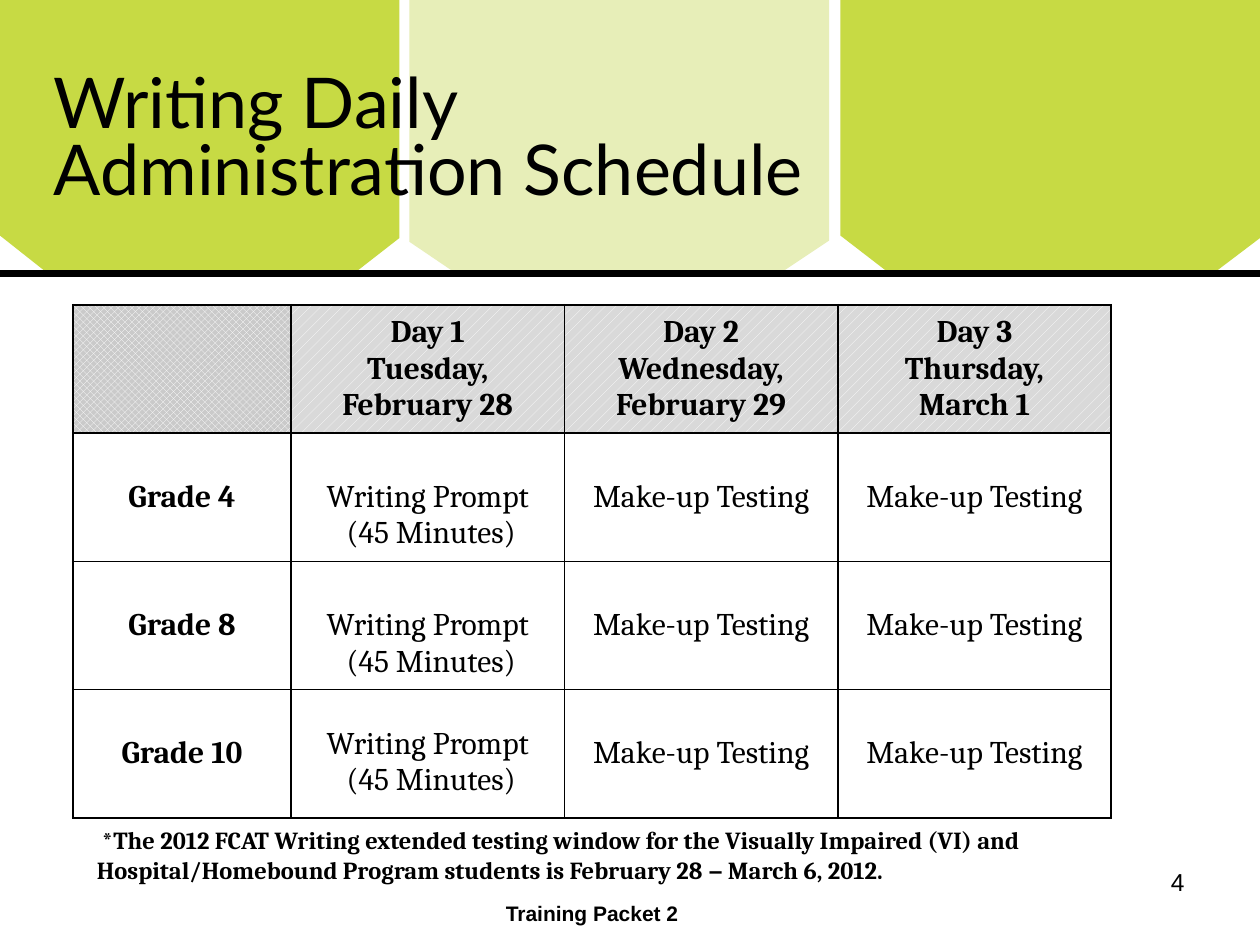
from lxml.etree import SubElement
from pptx import Presentation
from pptx.dml.color import RGBColor
from pptx.enum.dml import MSO_PATTERN as Pattern
from pptx.enum.shapes import MSO_CONNECTOR as Connector
from pptx.enum.text import MSO_ANCHOR as Anchor, MSO_AUTO_SIZE as AutoSize, PP_ALIGN as Align
from pptx.oxml.ns import qn
from pptx.util import Inches, Pt

BLACK, WHITE, LIME, PALE = "000000", "FFFFFF", "C7DA44", "E7EEB8"
HEADINGS = [
    [],
    ["Day 1", "Tuesday,", "February 28"],
    ["Day 2", "Wednesday,", "February 29"],
    ["Day 3", "Thursday,", "March 1"],
]
GRADES = ["Grade 4", "Grade 8", "Grade 10"]
PROMPT = ["Writing Prompt", " (45 Minutes)"]
MAKE_UP = ["Make-up Testing"]


def color(value):
    """Turn a hex string into a colour."""
    return RGBColor.from_string(value)


def write(frame, lines, align=Align.LEFT, spacing=None, **style):
    """Fill a frame with lines; a line is a string or a list of (text, style) runs."""
    for index, line in enumerate(lines):
        paragraph = frame.paragraphs[0] if index == 0 else frame.add_paragraph()
        paragraph.alignment = align
        paragraph.line_spacing = spacing
        for text, changes in [(line, {})] if isinstance(line, str) else line:
            look = {"font": "Cambria", "size": 18, "bold": False, **style, **changes}
            for part, piece in enumerate(text.split("\n")):
                if part:
                    paragraph.add_line_break()
                run = paragraph.add_run()
                run.text = piece
                run.font.name = look["font"]
                run.font.size = Pt(look["size"])
                run.font.bold = look["bold"]
                run.font.color.rgb = color(BLACK)


def add_text(slide, box, lines, anchor=Anchor.TOP, wrap=True, grow=False, **style):
    """Place a text box and write its lines."""
    frame = slide.shapes.add_textbox(*map(Inches, box)).text_frame
    frame.word_wrap = wrap
    frame.auto_size = AutoSize.SHAPE_TO_FIT_TEXT if grow else AutoSize.NONE
    frame.vertical_anchor = anchor
    write(frame, lines, **style)


def add_tab(slide, box, fill, left_cut, right_cut):
    """Draw a tab whose bottom corners are cut by (width, height)."""
    left, top, width, height = box
    right, bottom = left + width, top + height
    points = [
        (left, top),
        (right, top),
        (right, bottom - right_cut[1]),
        (right - right_cut[0], bottom),
        (left + left_cut[0], bottom),
        (left, bottom - left_cut[1]),
    ]
    corners = [(Inches(x), Inches(y)) for x, y in points]
    outline = slide.shapes.build_freeform(*corners[0], scale=1.0)
    outline.add_line_segments(corners[1:], close=True)
    tab = outline.convert_to_shape()
    tab.shadow.inherit = False
    tab.fill.solid()
    tab.fill.fore_color.rgb = color(fill)
    tab.line.fill.background()


def add_banner(slide, box):
    """Draw the three tabs, the rule under them and the title."""
    left, top, width, height = box
    add_tab(slide, (left, top, 3.17, height), LIME, (0.38, 0.3), (0.36, 0.28))
    add_tab(slide, (left + 3.25, top, 3.33, height), PALE, (0.37, 0.25), (0.39, 0.26))
    add_tab(slide, (left + 6.67, top, 3.33, height), LIME, (0.39, 0.3), (0.37, 0.28))
    bottom = Inches(top + height)
    rule = slide.shapes.add_connector(
        Connector.STRAIGHT, Inches(left), bottom, Inches(left + width), bottom)
    rule.line.color.rgb = color(BLACK)
    rule.line.width = Pt(4)
    SubElement(rule._element.spPr, qn("a:effectLst"))
    add_text(slide, (left + 0.33, top + 0.5, 9, 1.25),
             ["Writing Daily \nAdministration Schedule"],
             anchor=Anchor.MIDDLE, spacing=0.8, font="Lato", size=40)


def set_borders(cell, widths):
    """Draw the left, right, top and bottom borders of a cell."""
    properties = cell._tc.get_or_add_tcPr()
    for side, width in zip("LRTB", widths):
        border = SubElement(properties, qn(f"a:ln{side}"), w=str(Pt(width)))
        fill = SubElement(border, qn("a:solidFill"))
        SubElement(fill, qn("a:srgbClr"), val=BLACK)


def fill_cell(cell, row, column):
    """Give heading cells a pattern, grade cells white and the rest no fill."""
    if row == 0:
        cell.fill.patterned()
        cell.fill.pattern = Pattern.PERCENT_20 if column else Pattern.DIAGONAL_CROSS
        cell.fill.fore_color.rgb = color(WHITE)
        cell.fill.back_color.rgb = color("D9D9D9" if column else "CACACA")
    elif column == 0:
        cell.fill.solid()
        cell.fill.fore_color.rgb = color(WHITE)
    else:
        cell.fill.background()


def add_schedule(slide, box):
    """Build the table of grades against testing days."""
    rows = [HEADINGS] + [[[grade], PROMPT, MAKE_UP, MAKE_UP] for grade in GRADES]
    last_row, last_column = len(rows) - 1, len(HEADINGS) - 1
    table = slide.shapes.add_table(len(rows), len(HEADINGS), *map(Inches, box)).table
    table.first_row = table.horz_banding = False
    for column, width in zip(table.columns, [1.73] + [2.17] * 3):
        column.width = Inches(width)
    for r, contents in enumerate(rows):
        table.rows[r].height = Inches(box[3] / len(rows))
        for c, lines in enumerate(contents):
            cell = table.cell(r, c)
            is_prompt = lines is PROMPT
            cell.margin_left = cell.margin_right = Inches(0.05)
            cell.margin_top = Inches(0.29 if is_prompt else 0)
            cell.margin_bottom = 0
            top_aligned = is_prompt and r == last_row
            cell.vertical_anchor = Anchor.TOP if top_aligned else Anchor.MIDDLE
            write(cell.text_frame, lines, align=Align.CENTER, bold=r == 0 or c == 0)
            edges = (c == 0, c == last_column, r == 0, r == last_row)
            set_borders(cell, [1.5 if edge else 1 for edge in edges])
            fill_cell(cell, r, c)


def add_footer(slide, box):
    """Place the note, the slide number and the packet name."""
    left, top, width, height = box
    note = [
        (" ", {"bold": False}),
        ("*The 2012 FCAT Writing extended testing window for the Visually Impaired (VI) "
         "and Hospital/Homebound Program students is February 28 ", {}),
        ("–", {"font": "Arial"}),
        (" March 6, 2012.", {}),
    ]
    add_text(slide, (left + 0.67, top, 8.58, 0.57), [note], grow=True, size=14, bold=True)
    add_text(slide, (left + 7.17, top + 0.33, 2.33, 0.52), ["4"],
             align=Align.RIGHT, font="Arial", size=14)
    add_text(slide, (left + 3.88, top + 0.6, 1.64, 0.3), ["Training Packet 2"],
             wrap=False, grow=True, align=Align.CENTER, font="Arial", size=12, bold=True)


def main():
    """Build and save the slide."""
    deck = Presentation()
    deck.slide_width, deck.slide_height = Inches(10), Inches(7.5)
    slide = deck.slides.add_slide(deck.slide_layouts[6])
    add_banner(slide, (0, 0, 10, 2.17))
    add_schedule(slide, (0.58, 2.42, 8.25, 4.07))
    add_footer(slide, (0, 6.5, 10, 1))
    deck.save("out.pptx")


if __name__ == "__main__":
    main()
